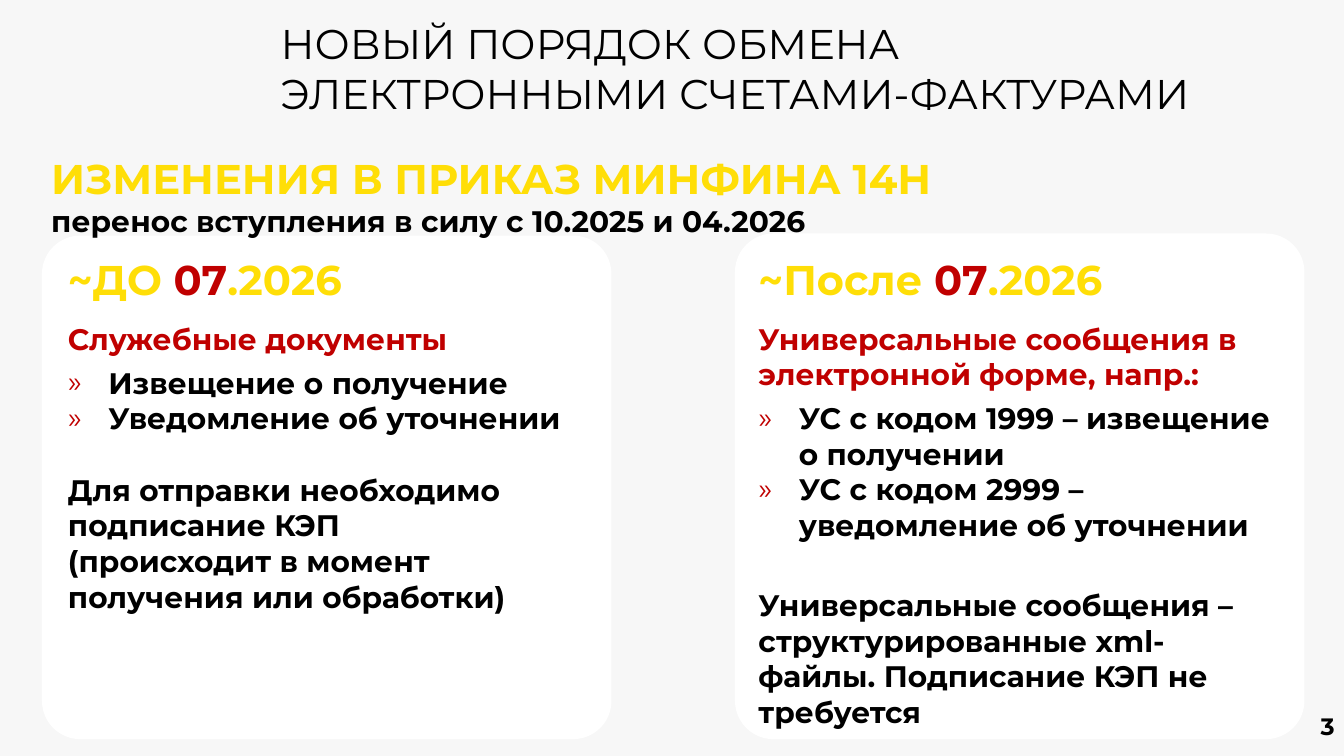
from lxml.etree import SubElement
from pptx import Presentation
from pptx.dml.color import RGBColor
from pptx.enum.shapes import MSO_SHAPE
from pptx.enum.text import MSO_ANCHOR, MSO_AUTO_SIZE, PP_ALIGN
from pptx.oxml.ns import qn
from pptx.util import Cm, Pt

COLORS = {"page": "F7F7F7", "card": "FFFFFF", "text": "000000",
          "yellow": "FFDE07", "red": "C00000"}
STYLES = {
    "title": {"font": {"size": Pt(28), "bold": False}, "color": "text"},
    "heading": {"font": {"size": Pt(28), "bold": True}, "color": "yellow"},
    "body": {"font": {"size": Pt(20), "bold": True}, "color": "text"},
    "number": {"font": {"size": Pt(16), "bold": True}, "color": "text"},
}
CARD_BOTTOM = 17.6
CARD_WIDTH = 13.56


class SlideBuilder:
    """Holds the style and the current slide and adds elements to it."""

    def __init__(self, page, typeface):
        self.page = page
        self.typeface = typeface
        fill = page.background.fill
        fill.solid()
        fill.fore_color.rgb = self.color("page")

    def color(self, name):
        return RGBColor.from_string(COLORS[name])

    def card(self, left, top):
        box = self.page.shapes.add_shape(
            MSO_SHAPE.ROUNDED_RECTANGLE, Cm(left), Cm(top),
            Cm(CARD_WIDTH), Cm(CARD_BOTTOM - top))
        box.adjustments[0] = 0.076
        box.shadow.inherit = False
        box.fill.solid()
        box.fill.fore_color.rgb = self.color("card")
        box.line.fill.background()

    def text(self, left, top, width, height, paragraphs):
        box = self.page.shapes.add_textbox(Cm(left), Cm(top), Cm(width), Cm(height))
        frame = box.text_frame
        settings = {"word_wrap": True, "auto_size": MSO_AUTO_SIZE.NONE,
                    "vertical_anchor": MSO_ANCHOR.TOP}
        for name, value in settings.items():
            setattr(frame, name, value)
        for index, content in enumerate(paragraphs):
            para = frame.add_paragraph() if index else frame.paragraphs[0]
            self.paragraph(para, **content)

    def paragraph(self, para, style, spans, bullet=False, layout=None):
        if bullet:
            self.bullet(para)
        for name, value in (layout or {}).items():
            setattr(para, name, value)
        for words, color in spans:
            span = para.add_run()
            span.text = words
            font = span.font
            for name, value in {"name": self.typeface, **STYLES[style]["font"]}.items():
                setattr(font, name, value)
            font.color.rgb = self.color(color or STYLES[style]["color"])

    def bullet(self, para):
        properties = para._p.get_or_add_pPr()
        indent = Cm(0.96)
        properties.set("marL", str(indent))
        properties.set("indent", str(-indent))
        tint = SubElement(properties, qn("a:buClr"))
        SubElement(tint, qn("a:srgbClr"), val=COLORS["red"])
        SubElement(properties, qn("a:buFont"), typeface=self.typeface)
        SubElement(properties, qn("a:buChar"), char="»")


def line(words, style="body", color=None, **options):
    """Describe a paragraph made of one span."""
    return {"style": style, "spans": [(words, color)], **options}


def column(period, subject, items, notes, gap):
    """Describe the paragraphs of one card."""
    heading = {"style": "heading", "layout": {"space_after": Pt(11.3)},
               "spans": [(period, "yellow"), ("07", "red"), (".2026", "yellow")]}
    subheading = line(subject, color="red", layout={"space_after": Pt(5.7)})
    bullets = [line(item, bullet=True) for item in items]
    closing = [line(note, layout={} if index else {"space_before": Pt(gap)})
               for index, note in enumerate(notes)]
    return [heading, subheading, *bullets, *closing]


def main():
    """Build the slide and save it."""
    deck = Presentation()
    deck.slide_width, deck.slide_height = Cm(32), Cm(18)
    builder = SlideBuilder(deck.slides.add_slide(deck.slide_layouts[6]), "Montserrat")

    builder.text(29.46, 16.76, 2.57, 0.97, [line(
        "3", "number", layout={"alignment": PP_ALIGN.RIGHT, "line_spacing": 1.1})])
    builder.text(6.43, 0.3, 24.71, 2.84, [line(
        "НОВЫЙ ПОРЯДОК ОБМЕНА ЭЛЕКТРОННЫМИ СЧЕТАМИ-ФАКТУРАМИ", "title")])

    builder.card(1, 5.61)
    builder.text(1.37, 5.92, 12.62, 8.89, column(
        "~ДО ", "Служебные документы",
        ["Извещение о получение", "Уведомление об уточнении"],
        ["Для отправки необходимо подписание КЭП",
         "(происходит в момент получения или обработки)"], 24.4))

    builder.card(17.5, 5.56)
    builder.text(17.81, 5.92, 12.83, 11.6, column(
        "~После ", "Универсальные сообщения в электронной форме, напр.:",
        ["УС с кодом 1999 – извещение о получении",
         "УС с кодом 2999 – уведомление об уточнении"],
        ["Универсальные сообщения – структурированные xml-файлы. "
         "Подписание КЭП не требуется"], 30.1))

    builder.text(0.97, 3.53, 21.92, 1.45, [line(
        "ИЗМЕНЕНИЯ В ПРИКАЗ МИНФИНА 14Н", "heading")])
    builder.text(0.97, 4.7, 18.95, 1.12, [line(
        "перенос вступления в силу с 10.2025 и 04.2026")])
    deck.save("out.pptx")


if __name__ == "__main__":
    main()
